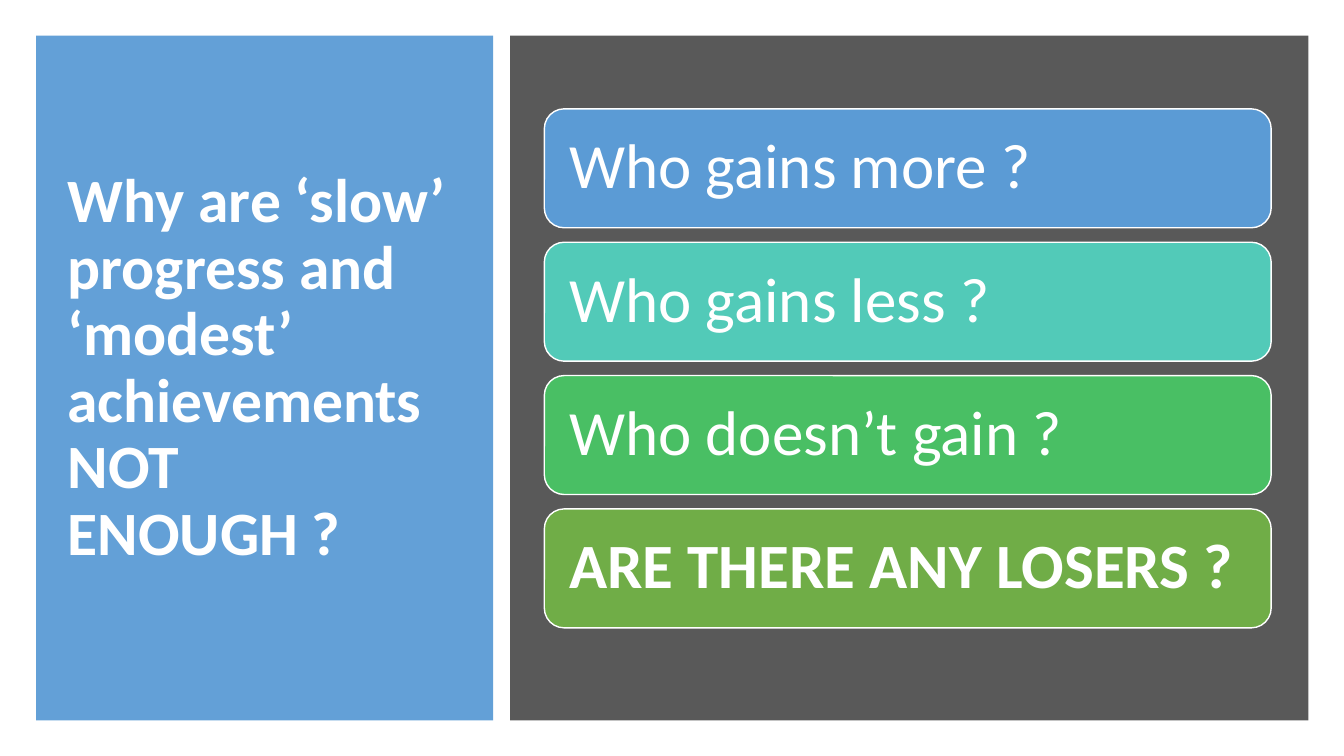
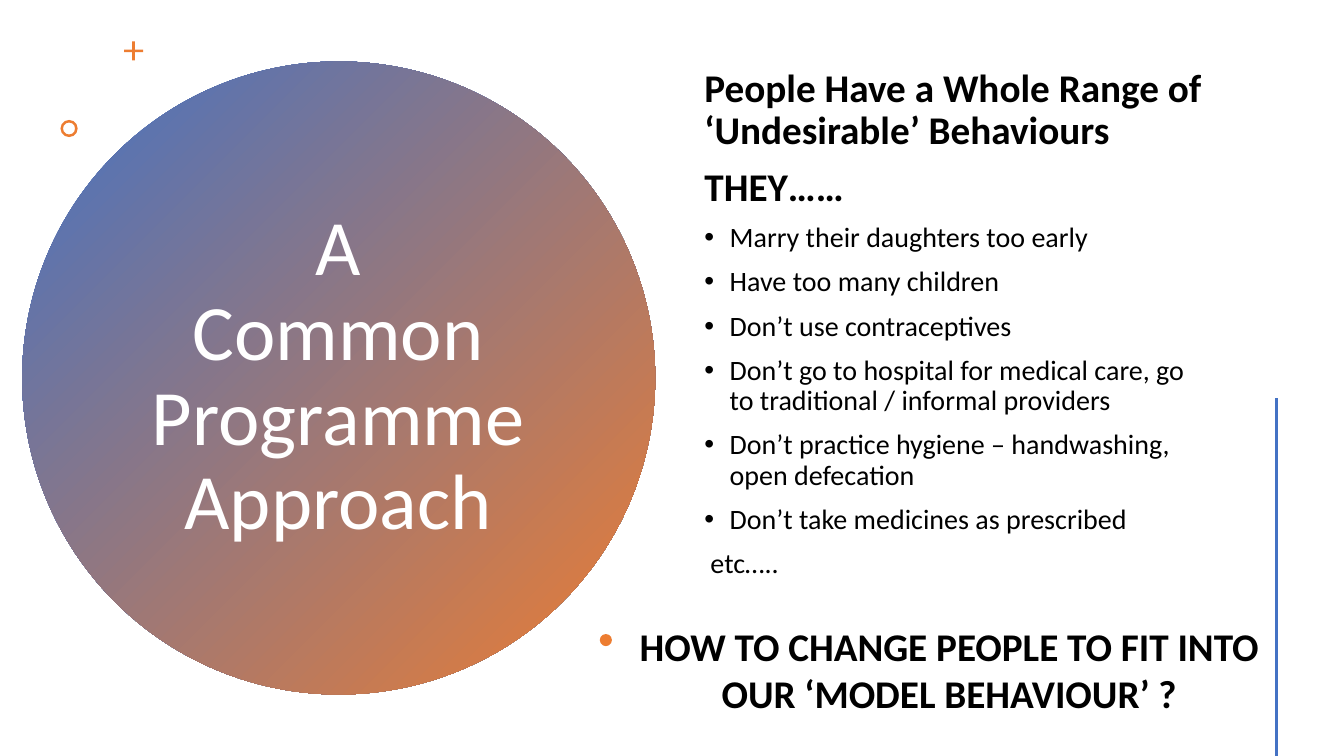
"""Two slides on programme gains and behaviours."""
from lxml import etree
from pptx import Presentation
from pptx import util as u
from pptx.dml import color as dml
from pptx.enum import shapes, text
from pptx.oxml.ns import qn

WIDE, HIGH = u.Inches(13.333), u.Inches(7.5)
FONT = "Calibri"
WHITE, BLACK, GREY = "FFFFFF", "000000", "595959"
BLUE, ORANGE, SKY = "4472C4", "ED7D31", "63A0D7"
KIND = shapes.MSO_SHAPE
LEFT, MID = text.PP_ALIGN.LEFT, text.PP_ALIGN.CENTER

CARDS = [
    ("Who gains more ?", "5B9BD5", False),
    ("Who gains less ?", "52CAB8", False),
    ("Who doesn’t gain ?", "49BF64", False),
    ("ARE THERE ANY LOSERS ?", "70AD47", True),
]
HEADS = ["People Have a Whole Range of ‘Undesirable’ Behaviours", "THEY……"]
HABITS = [
    "Marry their daughters too early",
    "Have too many children",
    "Don’t use contraceptives",
    "Don’t go to hospital for medical care, go to traditional / informal providers",
    "Don’t practice hygiene – handwashing, open defecation",
    "Don’t take medicines as prescribed",
]


def rgb(code):
    """Turn a hex string into a colour."""
    return dml.RGBColor.from_string(code)


def place(x, y, w, h):
    """Turn percentages of the slide's size into lengths."""
    return [int(side * share / 100)
            for side, share in zip((WIDE, HIGH, WIDE, HIGH), (x, y, w, h))]


def style(para, size, hue, bold=False, align=LEFT, lead=0.9):
    """Format one paragraph and its runs."""
    para.alignment, para.line_spacing = align, lead
    for run in para.runs:
        font = run.font
        font.name, font.size, font.bold = FONT, u.Pt(size), bold
        font.color.rgb = rgb(hue)


def shape(slide, kind, box, fill, edge=None, adj=None):
    """Draw a flat preset shape."""
    item = slide.shapes.add_shape(kind, *place(*box))
    item.shadow.inherit = False
    item.fill.solid()
    item.fill.fore_color.rgb = rgb(fill)
    if edge:
        item.line.color.rgb = rgb(edge)
        item.line.width = u.Pt(1)
    else:
        item.line.fill.background()
    if adj is not None:
        item.adjustments[0] = adj
    return item


def title(slide, words, box, size, bold=False, align=LEFT):
    """Set the title and bring it to the front."""
    item = slide.shapes.title
    item.left, item.top, item.width, item.height = place(*box)
    frame = item.text_frame
    frame.text = words
    frame.word_wrap = True
    frame.auto_size = text.MSO_AUTO_SIZE.NONE
    frame.vertical_anchor = text.MSO_ANCHOR.MIDDLE
    style(frame.paragraphs[0], size, WHITE, bold, align)
    slide.shapes._spTree.append(item._element)


def card(slide, row, words, fill, bold):
    """Draw one question card in its row."""
    item = shape(slide, KIND.ROUNDED_RECTANGLE,
                 (40.5, 14.4 + 17.64 * row, 54.08, 15.73), fill, WHITE)
    frame = item.text_frame
    frame.text = words
    frame.margin_left = frame.margin_right = u.Inches(0.19)
    frame.vertical_anchor = text.MSO_ANCHOR.MIDDLE
    style(frame.paragraphs[0], 45, WHITE, bold)


def note(slide, box, lines):
    """Add a wrapping text box with one paragraph per line."""
    frame = slide.shapes.add_textbox(*place(*box)).text_frame
    frame.word_wrap = True
    frame.text = "\n".join(lines)
    return frame.paragraphs


def indent(para, left, mark=None):
    """Indent a paragraph and hang a bullet if given."""
    props = para._p.get_or_add_pPr()
    props.set("marL", str(u.Inches(left)))
    if mark:
        props.set("indent", str(-u.Inches(left)))
        etree.SubElement(props, qn("a:buFont")).set("typeface", "Arial")
        etree.SubElement(props, qn("a:buChar")).set("char", mark)


def rule(slide, x, top, end, hue):
    """Draw a vertical line."""
    x, top, _, end = place(x, top, 0, end)
    item = slide.shapes.add_connector(shapes.MSO_CONNECTOR.STRAIGHT, x, top, x, end)
    item.line.color.rgb = rgb(hue)
    item.line.width = u.Pt(2)
    etree.SubElement(item._element.spPr, qn("a:effectLst"))


def disc(slide, box):
    """Draw the circle with its diagonal blend."""
    fill = shape(slide, KIND.OVAL, box, BLUE).fill
    fill.gradient()
    fill.gradient_angle = 315
    for stop, spot, hue in zip(fill.gradient_stops, (0, 1), (BLUE, ORANGE)):
        stop.position = spot
        stop.color.rgb = rgb(hue)


def habits(slide):
    """List the behaviours under their headings."""
    paras = note(slide, (51.68, 8.4, 39.15, 70.7), HEADS + HABITS + ["etc….."])
    for i, para in enumerate(paras):
        head = i < len(HEADS)
        style(para, 28 if head else 20, BLACK, head)
        para.space_before = u.Pt(10 if i else 0)
        if not head:
            last = i == len(paras) - 1
            indent(para, 0.06 if last else 0.25, None if last else "•")


def gains(slide):
    """Build the slide on who gains."""
    for x, w, fill in ((2.7, 34, SKY), (37.95, 59.4, GREY)):
        shape(slide, KIND.RECTANGLE, (x, 4.7, w, 90.6), fill)
    title(slide, "Why are ‘slow’ progress and ‘modest’ achievements NOT\vENOUGH ?",
          (4.28, 8.53, 30.53, 80.53), 44, True)
    for row, data in enumerate(CARDS):
        card(slide, row, *data)


def common(slide):
    """Build the slide on the common approach."""
    disc(slide, (1.65, 8.13, 47.1, 83.73))
    title(slide, "A\vCommon\vProgramme Approach",
          (10.2, 18.8, 29.93, 62.27), 56, align=MID)
    shape(slide, KIND.CROSS, (9.23, 5.47, 1.43, 2.53), ORANGE, adj=0.43)
    shape(slide, KIND.DONUT, (4.5, 15.87, 1.28, 2.27), ORANGE, adj=0.15)
    habits(slide)
    shape(slide, KIND.OVAL, (44.63, 83.87, 0.9, 1.6), ORANGE)
    rule(slide, 95, 52.67, 100, BLUE)
    ask = note(slide, (46.2, 81.6, 48.83, 18),
               ["HOW TO CHANGE PEOPLE TO FIT INTO OUR ‘MODEL BEHAVIOUR’ ?"])
    style(ask[0], 28, BLACK, True, MID, 1.0)


def main():
    """Build and save the deck."""
    deck = Presentation()
    deck.slide_width, deck.slide_height = WIDE, HIGH
    for build in (gains, common):
        build(deck.slides.add_slide(deck.slide_layouts[5]))
    deck.save("out.pptx")


if __name__ == "__main__":
    main()
